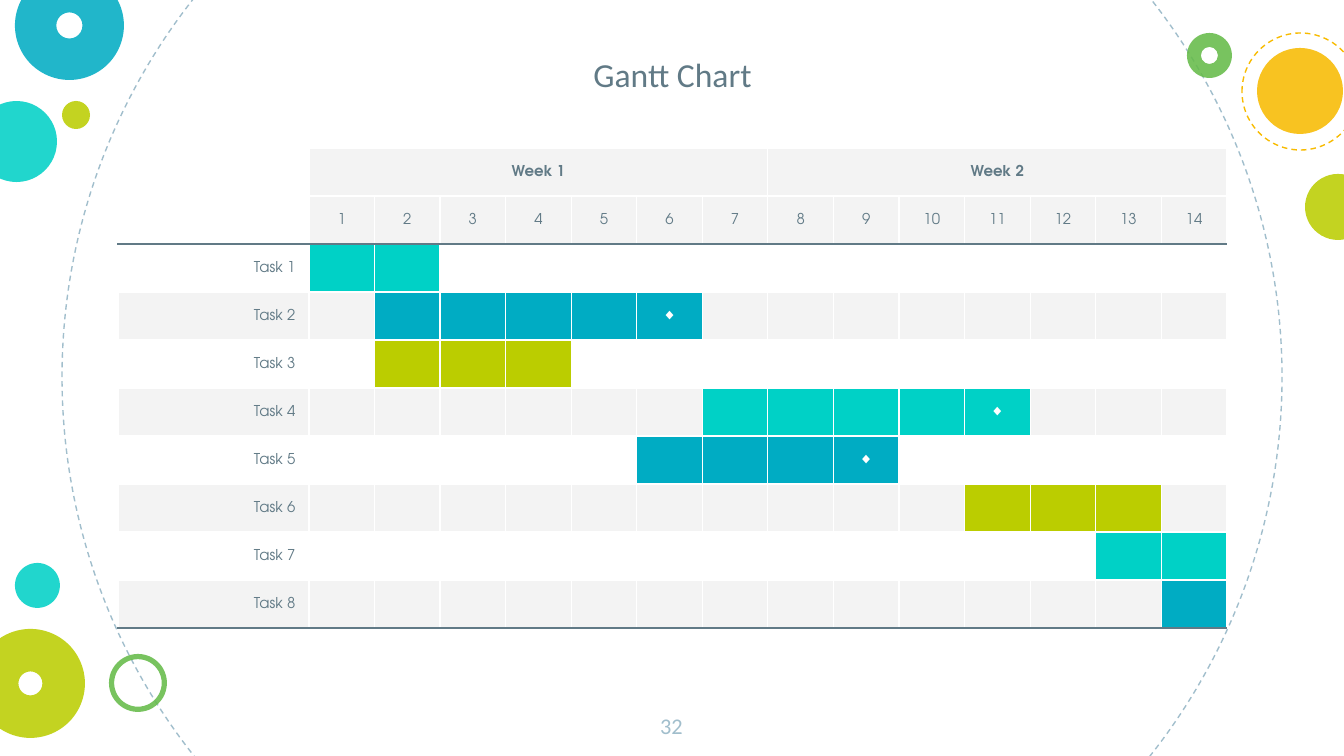
"""Builds a two-week Gantt chart slide framed by circles and rings."""
from dataclasses import dataclass
from typing import Optional

from lxml.etree import SubElement
from pptx import Presentation
from pptx.dml.color import RGBColor
from pptx.enum.dml import MSO_LINE
from pptx.enum.shapes import MSO_SHAPE as Shape
from pptx.enum.text import MSO_ANCHOR as Anchor, PP_ALIGN as Align
from pptx.oxml.ns import qn
from pptx.util import Emu, Pt

PX_PER_INCH = 134.4
SLIDE_WIDTH, SLIDE_HEIGHT = 1344, 756
TEXT_INSET = 13
TABLE_LEFT, TABLE_TOP = 118, 148
LABEL_WIDTH, DAYS_WIDTH, ROW_HEIGHT = 191, 918, 48
WEEKS, DAYS_PER_WEEK, HEADER_ROWS = 2, 7, 2
DAYS = WEEKS * DAYS_PER_WEEK
BORDER_PT = 0.75
OPACITY = 87

HEADING_FONT, TABLE_FONT = "Calibri", "TeX Gyre Adventor"
WHITE = RGBColor(0xFF, 0xFF, 0xFF)
SLATE = RGBColor(0x61, 0x7A, 0x86)
MIST = RGBColor(0xA1, 0xBE, 0xCC)
PALE = RGBColor(0xF3, 0xF3, 0xF3)
TEAL = RGBColor(0x00, 0xD1, 0xC6)
BLUE = RGBColor(0x00, 0xAC, 0xC3)
LIME = RGBColor(0xBB, 0xCD, 0x00)
GREEN = RGBColor(0x65, 0xBB, 0x48)
YELLOW = RGBColor(0xF8, 0xBB, 0x00)


@dataclass(frozen=True)
class Circle:
    left: int
    top: int
    size: int
    color: RGBColor
    dashed: bool = False
    ring: Optional[float] = None


@dataclass(frozen=True)
class Task:
    first_day: int
    last_day: int
    color: RGBColor
    milestone: bool = False


CIRCLES = [
    Circle(62, -233, 1220, MIST, dashed=True),
    Circle(-24, 101, 81, TEAL),
    Circle(15, -29, 109, BLUE, ring=0.38),
    Circle(62, 101, 28, LIME),
    Circle(109, 654, 58, GREEN, ring=0.09),
    Circle(-24, 629, 109, LIME, ring=0.39),
    Circle(1187, 33, 45, GREEN, ring=0.31),
    Circle(1257, 48, 86, YELLOW),
    Circle(1305, 174, 66, LIME),
    Circle(1242, 33, 117, YELLOW, dashed=True),
    Circle(15, 563, 45, TEAL),
]

TASKS = [
    Task(1, 2, TEAL),
    Task(2, 6, BLUE, milestone=True),
    Task(2, 4, LIME),
    Task(7, 11, TEAL, milestone=True),
    Task(6, 9, BLUE, milestone=True),
    Task(11, 13, LIME),
    Task(13, 14, TEAL),
    Task(14, 14, BLUE),
]


def px(length: int) -> Emu:
    """Turn a length in px into EMU."""
    return Emu(round(length * 914400 / PX_PER_INCH))


def draw_circle(slide, circle: Circle) -> None:
    """Draw a dashed outline, a disc or a ring."""
    kind = Shape.OVAL if circle.ring is None else Shape.DONUT
    shape = slide.shapes.add_shape(
        kind, px(circle.left), px(circle.top), px(circle.size), px(circle.size))
    shape.shadow.inherit = False
    if circle.ring is not None:
        shape.adjustments[0] = circle.ring
    if circle.dashed:
        shape.fill.background()
        shape.line.color.rgb = circle.color
        shape.line.width = Pt(BORDER_PT)
        shape.line.dash_style = MSO_LINE.DASH
        return
    shape.line.fill.background()
    shape.fill.solid()
    shape.fill.fore_color.rgb = circle.color
    color = shape.fill._xPr.find(qn("a:solidFill"))[0]
    SubElement(color, qn("a:alpha"), val=str(OPACITY * 1000))


def style_paragraph(para, text: str, font: str, size: int, color: RGBColor,
                    align: Align = Align.CENTER, bold: bool = False) -> None:
    """Write a paragraph and set its font."""
    para.text = text
    para.alignment = align
    para.font.name = font
    para.font.size = Pt(size)
    para.font.bold = bold
    para.font.color.rgb = color


def draw_text(slide, text: str, left: int, top: int, width: int, height: int,
              size: int, color: RGBColor, anchor: Anchor) -> None:
    """Draw a centred line of heading text."""
    box = slide.shapes.add_textbox(px(left), px(top), px(width), px(height))
    frame = box.text_frame
    frame.word_wrap = True
    frame.vertical_anchor = anchor
    frame.margin_left = frame.margin_right = px(TEXT_INSET)
    frame.margin_top = frame.margin_bottom = px(TEXT_INSET)
    style_paragraph(frame.paragraphs[0], text, HEADING_FONT, size, color)


def style_cell(cell, fill: Optional[RGBColor], top: RGBColor, bottom: RGBColor) -> None:
    """Set the borders, fill and empty-line height of a cell."""
    properties = cell._tc.get_or_add_tcPr()
    sides = {"a:lnL": WHITE, "a:lnR": WHITE, "a:lnT": top, "a:lnB": bottom}
    for side, color in sides.items():
        line = SubElement(properties, qn(side), w=str(Pt(BORDER_PT)))
        SubElement(SubElement(line, qn("a:solidFill")), qn("a:srgbClr"), val=str(color))
    if fill is None:
        cell.fill.background()
    else:
        cell.fill.solid()
        cell.fill.fore_color.rgb = fill
    cell.vertical_anchor = Anchor.MIDDLE
    cell.text_frame.paragraphs[0]._p.get_or_add_endParaRPr().set("sz", "800")


def write_cell(cell, text: str, color: RGBColor = SLATE,
               align: Align = Align.CENTER, bold: bool = False) -> None:
    """Write the text of a table cell."""
    style_paragraph(cell.text_frame.paragraphs[0], text, TABLE_FONT, 8, color, align, bold)


def cell_fill(row: int, day: int) -> Optional[RGBColor]:
    """Give the fill of a cell, where day 0 is the label column."""
    if row < HEADER_ROWS:
        return PALE if day else None
    task = TASKS[row - HEADER_ROWS]
    if task.first_day <= day <= task.last_day:
        return task.color
    return PALE if row % 2 else None


def draw_gantt(slide) -> None:
    """Draw the chart as a table of days and tasks."""
    rows = HEADER_ROWS + len(TASKS)
    table = slide.shapes.add_table(
        rows, DAYS + 1, px(TABLE_LEFT), px(TABLE_TOP),
        px(LABEL_WIDTH + DAYS_WIDTH), px(ROW_HEIGHT * rows)).table
    table.first_row = table.horz_banding = False
    for day, column in enumerate(table.columns):
        column.width = Emu(px(DAYS_WIDTH) // DAYS) if day else px(LABEL_WIDTH)
    for row in range(rows):
        table.rows[row].height = px(ROW_HEIGHT)
        top = SLATE if row == HEADER_ROWS else WHITE
        bottom = SLATE if row in (HEADER_ROWS - 1, rows - 1) else WHITE
        for day in range(DAYS + 1):
            style_cell(table.cell(row, day), cell_fill(row, day), top, bottom)
    for week in range(WEEKS):
        first = week * DAYS_PER_WEEK + 1
        table.cell(0, first).merge(table.cell(0, first + DAYS_PER_WEEK - 1))
        write_cell(table.cell(0, first), f"Week {week + 1}", bold=True)
    for day in range(1, DAYS + 1):
        write_cell(table.cell(1, day), str(day))
    for number, task in enumerate(TASKS, 1):
        row = HEADER_ROWS + number - 1
        write_cell(table.cell(row, 0), f"Task {number}", align=Align.RIGHT)
        if task.milestone:
            write_cell(table.cell(row, task.last_day), "◆", WHITE)


def main() -> None:
    """Build and save the deck."""
    deck = Presentation()
    deck.slide_width, deck.slide_height = px(SLIDE_WIDTH), px(SLIDE_HEIGHT)
    slide = deck.slides.add_slide(deck.slide_layouts[6])
    for circle in CIRCLES:
        draw_circle(slide, circle)
    draw_text(slide, "32", 637, 699, 69, 58, 12, MIST, Anchor.TOP)
    draw_gantt(slide)
    draw_text(slide, "Gantt Chart", 285, 13, 775, 94, 18, SLATE, Anchor.BOTTOM)
    deck.save("out.pptx")


if __name__ == "__main__":
    main()
